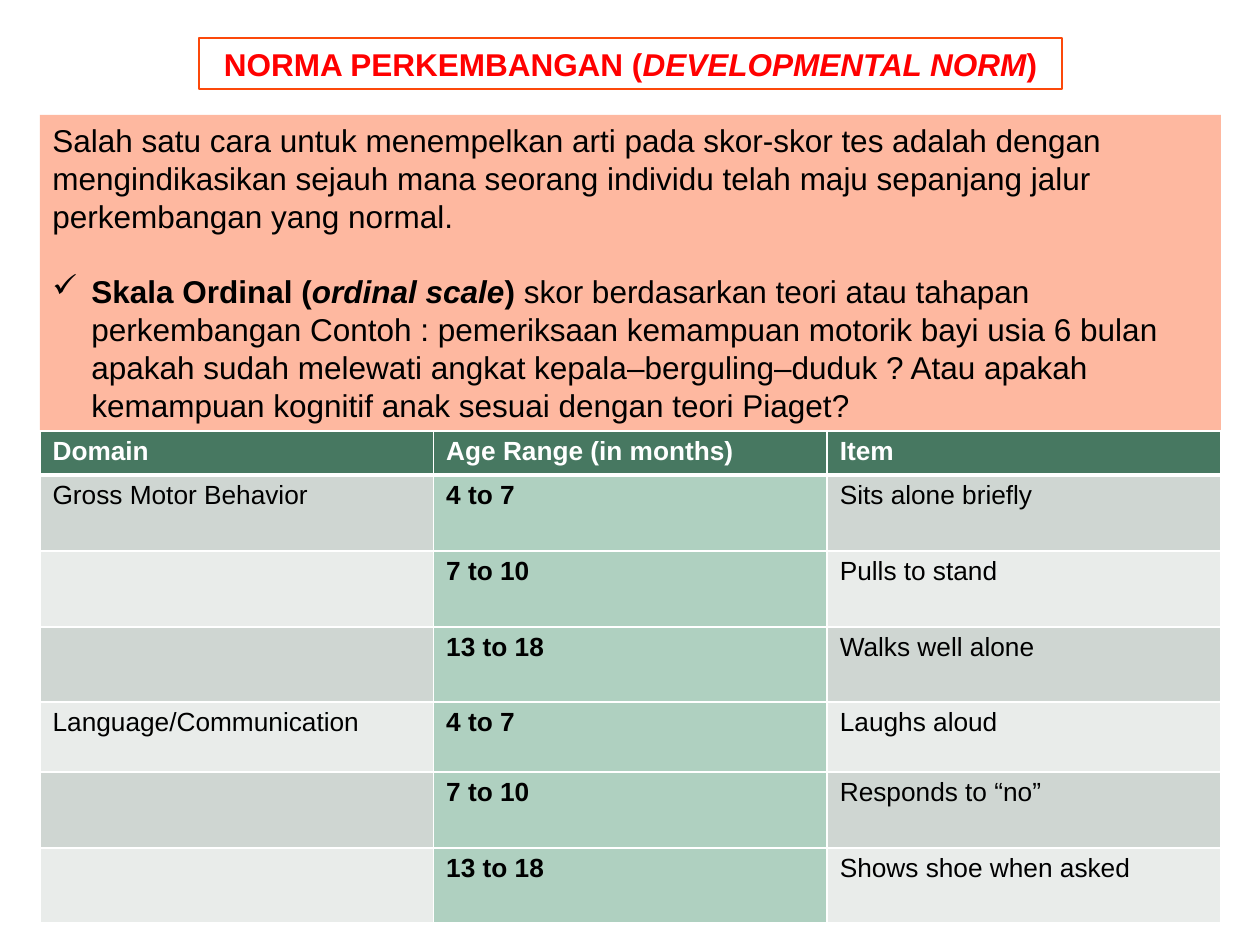
import pptx
import pptx.dml.color
import pptx.enum.shapes
import pptx.enum.text
import pptx.oxml
import pptx.oxml.ns
import pptx.util
from lxml import etree

RGBColor = pptx.dml.color.RGBColor
Pt = pptx.util.Pt
PP_ALIGN = pptx.enum.text.PP_ALIGN
MSO_ANCHOR = pptx.enum.text.MSO_ANCHOR

PX = 914400 / 126
FONT = "Arial"
BLACK = RGBColor(0x00, 0x00, 0x00)
WHITE = RGBColor(0xFF, 0xFF, 0xFF)
RED = RGBColor(0xFF, 0x00, 0x00)
ORANGE = RGBColor(0xFC, 0x48, 0x0A)
SALMON = RGBColor(0xFE, 0xB8, 0xA0)
DARK_GREEN = RGBColor(0x47, 0x78, 0x61)
MID_GREEN = RGBColor(0xAF, 0xD0, 0xC0)
BANDS = (RGBColor(0xCF, 0xD6, 0xD2), RGBColor(0xE9, 0xEC, 0xEA))

INTRO = ("Salah satu cara untuk menempelkan arti pada skor-skor tes adalah dengan "
         "mengindikasikan sejauh mana seorang individu telah maju sepanjang jalur "
         "perkembangan yang normal.")
EXAMPLE = ("skor berdasarkan teori atau tahapan perkembangan Contoh : pemeriksaan "
           "kemampuan motorik bayi usia 6 bulan apakah sudah melewati angkat "
           "kepala–berguling–duduk ? Atau apakah kemampuan kognitif anak sesuai "
           "dengan teori Piaget?")

ROW_HEIGHTS = (44, 76, 76, 75, 70, 76, 75)
NORMS = (
    ("Domain", "Age Range (in months)", "Item"),
    ("Gross Motor Behavior", "4 to 7", "Sits alone briefly"),
    ("", "7 to 10", "Pulls to stand"),
    ("", "13 to 18", "Walks well alone"),
    ("Language/Communication", "4 to 7", "Laughs aloud"),
    ("", "7 to 10", "Responds to “no”"),
    ("", "13 to 18", "Shows shoe when asked"),
)


def px(n):
    return pptx.util.Emu(round(n * PX))


def add_text(p, text, size=18, color=BLACK, bold=False, italic=False):
    r = p.add_run()
    r.text = text
    r.font.name = FONT
    r.font.size = Pt(size)
    r.font.color.rgb = color
    r.font.bold = bold
    r.font.italic = italic


def set_frame(tf, anchor):
    tf.word_wrap = True
    tf.auto_size = pptx.enum.text.MSO_AUTO_SIZE.NONE
    tf.vertical_anchor = anchor
    tf.margin_left = tf.margin_right = Pt(7.2)
    tf.margin_top = tf.margin_bottom = Pt(3.6)


def add_bullet(p, char, indent):
    pPr = p._p.get_or_add_pPr()
    pPr.set("marL", str(indent))
    pPr.set("indent", str(-indent))
    etree.SubElement(pPr, pptx.oxml.ns.qn("a:buChar"), char=char)


def set_borders(cell, **widths):
    """Draw white cell borders; the keys are L, R, T and B, the values points."""
    tcPr = cell._tc.get_or_add_tcPr()
    for i, (side, width) in enumerate(widths.items()):
        tcPr.insert(i, pptx.oxml.parse_xml(
            f'<a:ln{side} {pptx.oxml.ns.nsdecls("a")} w="{Pt(width)}">'
            f'<a:solidFill><a:srgbClr val="{WHITE}"/></a:solidFill></a:ln{side}>'))


def place_title(slide, x, y, w, h):
    sp = slide.shapes.title
    sp.left, sp.top, sp.width, sp.height = px(x), px(y), px(w), px(h)
    sp.line.color.rgb = ORANGE
    sp.line.width = Pt(0.75)
    set_frame(sp.text_frame, MSO_ANCHOR.MIDDLE)
    p = sp.text_frame.paragraphs[0]
    p.alignment = PP_ALIGN.CENTER
    add_text(p, "NORMA PERKEMBANGAN (", color=RED, bold=True)
    add_text(p, "DEVELOPMENTAL NORM", color=RED, bold=True, italic=True)
    add_text(p, ")", color=RED, bold=True)


def add_explanation(slide, x, y, w, h):
    sp = slide.shapes.add_shape(pptx.enum.shapes.MSO_SHAPE.RECTANGLE,
                                px(x), px(y), px(w), px(h))
    sp.shadow.inherit = False
    sp.fill.solid()
    sp.fill.fore_color.rgb = SALMON
    sp.line.fill.background()
    tf = sp.text_frame
    set_frame(tf, MSO_ANCHOR.TOP)
    intro, scale = tf.paragraphs[0], tf.add_paragraph()
    for p in (intro, scale):
        p.alignment = PP_ALIGN.LEFT
        p.line_spacing = Pt(21.6)
    scale.space_before = Pt(21.6)
    add_bullet(scale, "✓", px(39))
    add_text(intro, INTRO)
    add_text(scale, "Skala Ordinal (", bold=True)
    add_text(scale, "ordinal scale", bold=True, italic=True)
    add_text(scale, ") ", bold=True)
    add_text(scale, EXAMPLE)


def add_norm_table(slide, x, y, w):
    n_cols = len(NORMS[0])
    table = slide.shapes.add_table(len(NORMS), n_cols, px(x), px(y), px(w),
                                   px(sum(ROW_HEIGHTS))).table
    for col in table.columns:
        col.width = px(w / n_cols)
    for i, (row, height) in enumerate(zip(NORMS, ROW_HEIGHTS)):
        table.rows[i].height = px(height)
        header = i == 0
        for j, text in enumerate(row):
            cell = table.cell(i, j)
            age = j == 1
            cell.fill.solid()
            cell.fill.fore_color.rgb = (DARK_GREEN if header else
                                        MID_GREEN if age else BANDS[(i - 1) % 2])
            set_borders(cell, L=1, R=1, T=3 if i == 1 else 1, B=3 if header else 1)
            if text:
                add_text(cell.text_frame.paragraphs[0], text, size=15,
                         color=WHITE if header else BLACK, bold=header or age)


def main():
    prs = pptx.Presentation()
    prs.slide_width, prs.slide_height = px(1260), px(945)
    slide = prs.slides.add_slide(prs.slide_layouts[5])
    place_title(slide, 199, 38, 863, 51)
    add_explanation(slide, 40, 115, 1181, 317)
    add_norm_table(slide, 40, 431, 1181)
    prs.save("out.pptx")


if __name__ == "__main__":
    main()
